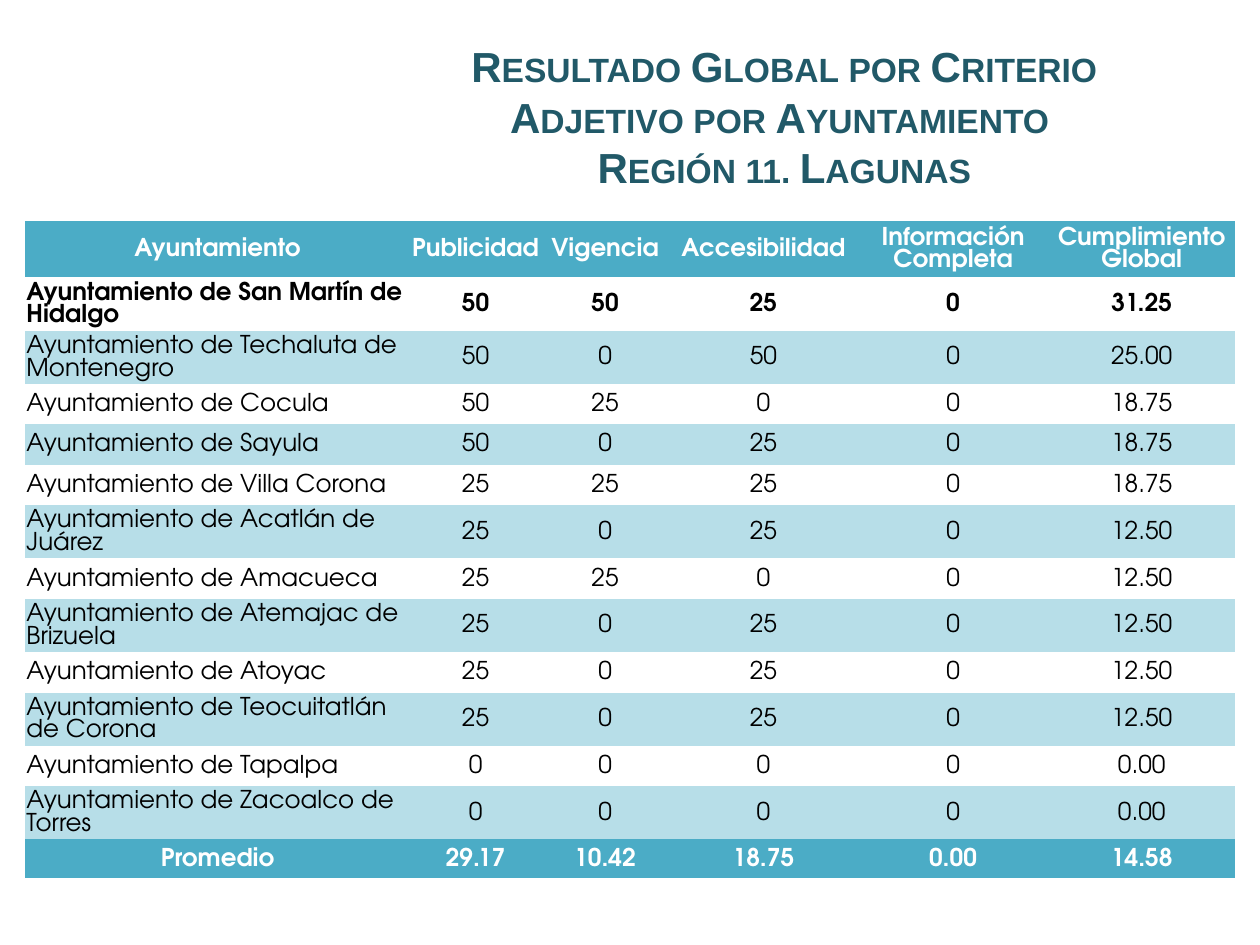
from lxml.etree import SubElement
from pptx import Presentation
from pptx.dml.color import RGBColor
from pptx.enum.text import MSO_ANCHOR, MSO_AUTO_SIZE, PP_ALIGN
from pptx.oxml.ns import qn
from pptx.util import Inches, Pt

COLORS = {
    "title": "215968",
    "header": "4BACC6",
    "band": "B7DEE8",
    "light": "FFFFFF",
    "dark": "000000",
}
UNIT = Inches(0.05)
SLIDE_COLUMNS, SLIDE_ROWS = 200, 150
TABLE_COLUMNS = [61.1, 20.8, 20.3, 30, 30.2, 29.7]
HEADER_ROW, DOUBLE_ROW, SINGLE_ROW, AVERAGE_ROW = 9.05, 8.45, 6.42, 6.2
LONGEST_SINGLE_LINE = 28
PLAIN_TABLE_STYLE = "{2D5ABB26-0587-4C30-8999-92F81FD0307C}"

TITLE = "Resultado Global por Criterio Adjetivo por Ayuntamiento \vRegión 11. Lagunas"
HEADINGS = ["Ayuntamiento", "Publicidad", "Vigencia", "Accesibilidad",
            "Información\vCompleta", "Cumplimiento Global"]
RESULTS = [
    ("San Martín de Hidalgo", 50, 50, 25, 0, 31.25),
    ("Techaluta de Montenegro", 50, 0, 50, 0, 25),
    ("Cocula", 50, 25, 0, 0, 18.75),
    ("Sayula", 50, 0, 25, 0, 18.75),
    ("Villa Corona", 25, 25, 25, 0, 18.75),
    ("Acatlán de Juárez", 25, 0, 25, 0, 12.5),
    ("Amacueca", 25, 25, 0, 0, 12.5),
    ("Atemajac de Brizuela", 25, 0, 25, 0, 12.5),
    ("Atoyac", 25, 0, 25, 0, 12.5),
    ("Teocuitatlán de Corona", 25, 0, 25, 0, 12.5),
    ("Tapalpa", 0, 0, 0, 0, 0),
    ("Zacoalco de Torres", 0, 0, 0, 0, 0),
]
AVERAGES = ["Promedio", "29.17", "10.42", "18.75", "0.00", "14.58"]


def grid(*counts):
    return [round(count * UNIT) for count in counts]


def write_text(frame, text, font="TeX Gyre Adventor", size=14, color="dark",
               bold=False, align=PP_ALIGN.CENTER, small_caps=False):
    frame.word_wrap = True
    paragraph = frame.paragraphs[0]
    paragraph.text = text
    paragraph.alignment = align
    for run in paragraph.runs:
        run.font.name = font
        run.font.size = Pt(size)
        run.font.bold = bold
        run.font.color.rgb = RGBColor.from_string(COLORS[color])
        if small_caps:
            run.font._element.set("cap", "small")


def add_title(slide):
    title = slide.shapes.title
    title.left, title.top, title.width, title.height = grid(59, 6, 131, 25)
    frame = title.text_frame
    frame.auto_size = MSO_AUTO_SIZE.NONE
    frame.vertical_anchor = MSO_ANCHOR.MIDDLE
    write_text(frame, TITLE, font="Arial", size=24, color="title", bold=True,
               small_caps=True)


def fill_row(table, index, values, height, fill=None, color="dark", bold=False,
             first_align=PP_ALIGN.CENTER):
    table.rows[index].height = grid(height)[0]
    for column, value in enumerate(values):
        cell = table.cell(index, column)
        cell.margin_left = cell.margin_right = cell.margin_top = Inches(0.01)
        cell.margin_bottom = 0
        cell.vertical_anchor = MSO_ANCHOR.MIDDLE
        if fill:
            cell.fill.solid()
            cell.fill.fore_color.rgb = RGBColor.from_string(COLORS[fill])
        else:
            cell.fill.background()
        align = PP_ALIGN.CENTER if column else first_align
        write_text(cell.text_frame, value, color=color, bold=bold, align=align)


def result_texts(town, *scores):
    *criteria, overall = scores
    return [f"Ayuntamiento de {town}", *map(str, criteria), f"{overall:.2f}"]


def add_results_table(slide):
    row_count = len(RESULTS) + 2
    frame = slide.shapes.add_table(row_count, len(TABLE_COLUMNS),
                                   *grid(4, 35, sum(TABLE_COLUMNS), 104))
    table = frame.table
    table.first_row = table.horz_banding = False
    properties = table._tbl.tblPr
    for style in properties.findall(qn("a:tableStyleId")):
        properties.remove(style)
    SubElement(properties, qn("a:tableStyleId")).text = PLAIN_TABLE_STYLE
    for column, width in zip(table.columns, grid(*TABLE_COLUMNS)):
        column.width = width

    emphasis = {"fill": "header", "color": "light", "bold": True}
    fill_row(table, 0, HEADINGS, HEADER_ROW, **emphasis)
    for index, result in enumerate(RESULTS, start=1):
        texts = result_texts(*result)
        height = DOUBLE_ROW if len(texts[0]) > LONGEST_SINGLE_LINE else SINGLE_ROW
        fill_row(table, index, texts, height, fill=None if index % 2 else "band",
                 bold=index == 1, first_align=PP_ALIGN.LEFT)
    fill_row(table, row_count - 1, AVERAGES, AVERAGE_ROW, **emphasis)


def main():
    presentation = Presentation()
    presentation.slide_width, presentation.slide_height = grid(SLIDE_COLUMNS, SLIDE_ROWS)
    slide = presentation.slides.add_slide(presentation.slide_layouts[5])
    add_title(slide)
    add_results_table(slide)
    presentation.save("out.pptx")


if __name__ == "__main__":
    main()
